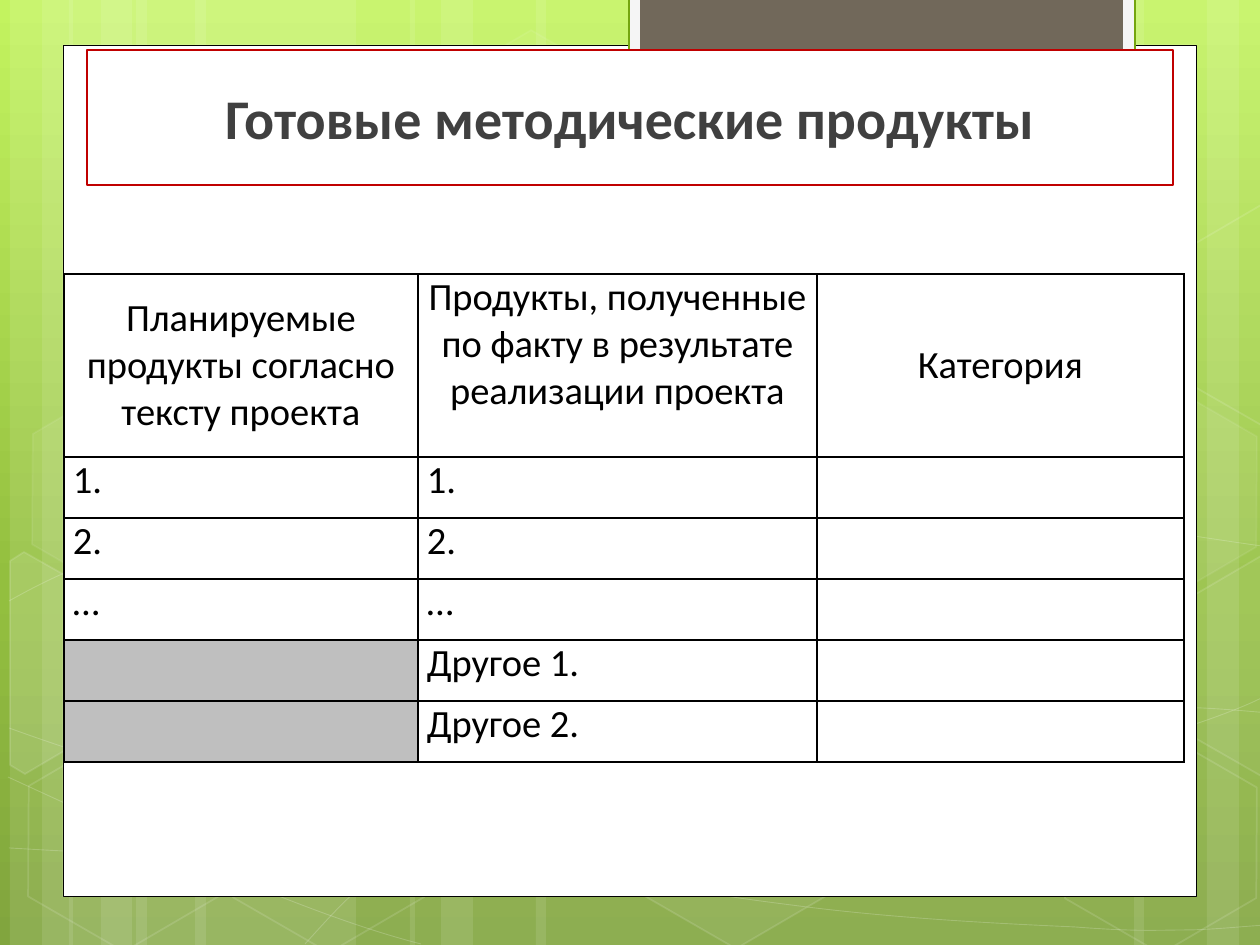
from copy import deepcopy
from dataclasses import dataclass

from lxml import etree
from pptx import Presentation
from pptx import util as u
from pptx.dml.color import RGBColor
from pptx.enum import shapes, text
from pptx.oxml.ns import qn

SCALE = 914400 / 126


@dataclass(frozen=True)
class Theme:
    font: str = "Calibri"
    head: int = 32
    body: int = 22
    sky: tuple = ((0, "C3F35F"), (0.62, "93BF3F"), (1, "81A53E"))
    white: str = "FFFFFF"
    black: str = "000000"
    ink: str = "404040"
    red: str = "C00000"
    green: str = "74A510"
    pale: str = "F5F5F5"
    brown: str = "71685A"
    gray: str = "BFBFBF"


T = Theme()

BANDS = [(136, 220), (10, 63), (42, 105), (195, 220), (69, 63), (101, 105),
         (924, 220), (1207, 63), (1134, 105), (536, 388), (410, 63), (441, 105)]

# Each curve: a start, then two control points and an end per segment.
CURVES = [
    [(9, 848), (77, 852), (145, 856), (239, 854), (334, 853), (451, 851), (577, 838),
     (703, 825), (882, 801), (998, 777), (1113, 753), (1231, 716), (1269, 694)],
    [(9, 601), (45, 581), (82, 562), (152, 543), (224, 524), (326, 496), (437, 488),
     (549, 479), (685, 478), (824, 488), (963, 498), (1193, 537), (1269, 547)],
    [(8, 777), (160, 847), (311, 916), (421, 944)],
    [(9, 728), (48, 742), (88, 756), (161, 776), (234, 795), (344, 827), (450, 848),
     (554, 869), (687, 892), (791, 905), (896, 919), (1008, 924), (1075, 927),
     (1140, 932), (1158, 930), (1191, 930), (1223, 929), (1246, 926), (1269, 925)],
    [(305, 944), (328, 919), (350, 893), (381, 871), (411, 848), (454, 823), (489, 805),
     (524, 788), (546, 780), (592, 767), (638, 755), (722, 737), (766, 728),
     (811, 719), (818, 719), (857, 717), (896, 713), (958, 709), (1000, 708),
     (1045, 707), (1116, 708), (1116, 708), (1138, 708), (1179, 708), (1201, 708),
     (1223, 709), (1245, 711), (1268, 713)],
]

# Left, top, fill opacity, line opacity
HEXES = [(421, 45, 4, 8), (626, 742, 6, 12), (14, 745, 0, 12), (18, 393, 7, 8),
         (219, 746, 0, 12), (949, 571, 10, 12), (1051, 747, 0, 12), (1051, 396, 7, 8)]

LEFT = [(10, 561), (24, 552), (121, 607), (120, 718), (25, 774), (10, 765)]
RIGHT = [(1167, 611), (1261, 556), (1271, 562), (1271, 772), (1263, 777), (1167, 722)]
UPPER = [(x, y - 351) for x, y in RIGHT]

ROWS = [
    ("Планируемые продукты согласно тексту проекта",
     "Продукты, полученные по факту в результате реализации проекта", "Категория"),
    ("1.", "1.", ""),
    ("2.", "2.", ""),
    ("…", "…", ""),
    ("", "Другое 1.", ""),
    ("", "Другое 2.", ""),
]


def px(n):
    return u.Emu(round(n * SCALE))


def paint(fill, color, alpha=100):
    """Solid fill with opacity in percent; zero means no fill."""
    if not alpha:
        fill.background()
        return
    fill.solid()
    fill.fore_color.rgb = RGBColor.from_string(color)
    if alpha < 100:
        tone = fill._xPr.find(qn("a:solidFill"))[0]
        etree.SubElement(tone, qn("a:alpha"), val=str(alpha * 1000))


def style(shape, fill=T.white, alpha=100, line=T.white, width=1, sheer=100):
    shape.shadow.inherit = False
    paint(shape.fill, fill, alpha)
    paint(shape.line.fill, line, sheer)
    if sheer:
        shape.line.width = u.Pt(width)


def add_box(slide, box, kind=shapes.MSO_SHAPE.RECTANGLE, **look):
    shape = slide.shapes.add_shape(kind, *map(px, box))
    style(shape, **look)
    return shape


def add_hex(slide, x, y, alpha, sheer):
    shape = add_box(slide, (x, y, 220, 192), shapes.MSO_SHAPE.HEXAGON,
                    alpha=alpha, sheer=sheer)
    shape.adjustments[0] = 0.285
    shape.rotation = 30


def add_path(slide, points, close=True, **look):
    pen = slide.shapes.build_freeform(*points[0], scale=SCALE)
    pen.add_line_segments(points[1:], close=close)
    shape = pen.convert_to_shape()
    style(shape, **look)
    return shape


def add_curve(slide, points):
    """Draw through all points, then join each three lines into one Bezier."""
    shape = add_path(slide, points, close=False, alpha=0, width=0.5, sheer=20)
    lines = list(shape._element.iter(qn("a:lnTo")))
    for i in range(0, len(lines), 3):
        first, *rest = lines[i:i + 3]
        first.addprevious(bend := first.makeelement(qn("a:cubicBezTo")))
        for line in (first, *rest):
            bend.append(line[0])
            line.getparent().remove(line)


def add_sky(slide):
    fill = slide.background.fill
    fill.gradient()
    fill.gradient_angle = 270
    first = fill.gradient_stops[0]._gs
    first.addnext(deepcopy(first))
    for stop, (place, color) in zip(fill.gradient_stops, T.sky):
        stop.position = place
        stop.color.rgb = RGBColor.from_string(color)


def set_font(para, size, color, bold=False):
    font = para.font
    font.name, font.size, font.bold = T.font, u.Pt(size), bold
    font.color.rgb = RGBColor.from_string(color)


def add_title(slide, words, box):
    title = slide.shapes.title
    slide.shapes._spTree.append(title._element)
    title.left, title.top, title.width, title.height = map(px, box)
    paint(title.fill, T.white)
    paint(title.line.fill, T.red)
    title.line.width = u.Pt(0.75)
    frame = title.text_frame
    frame.text = words
    frame.vertical_anchor = text.MSO_ANCHOR.MIDDLE
    para = frame.paragraphs[0]
    para.alignment = text.PP_ALIGN.CENTER
    set_font(para, T.head, T.ink, True)


def add_edges(cell):
    props = cell._tc.get_or_add_tcPr()
    for side in "LRTB":
        edge = etree.SubElement(props, qn(f"a:ln{side}"), w=str(u.Pt(1)))
        fill = etree.SubElement(edge, qn("a:solidFill"))
        etree.SubElement(fill, qn("a:srgbClr"), val=T.black)


def add_grid(slide, x, y, cols, highs):
    grid = slide.shapes.add_table(len(highs), len(cols), px(x), px(y),
                                  px(sum(cols)), px(sum(highs))).table
    grid.first_row = grid.horz_banding = False
    for col, wide in zip(grid.columns, cols):
        col.width = px(wide)
    for r, (row, high, words) in enumerate(zip(grid.rows, highs, ROWS)):
        row.height = px(high)
        for c, (cell, word) in enumerate(zip(row.cells, words)):
            cell.text = word
            cell.margin_left = cell.margin_right = px(9)
            cell.margin_top = cell.margin_bottom = 0
            para = cell.text_frame.paragraphs[0]
            set_font(para, T.body, T.black)
            if r == 0:
                para.alignment = text.PP_ALIGN.CENTER
                if c != 1:
                    cell.vertical_anchor = text.MSO_ANCHOR.MIDDLE
            add_edges(cell)
            paint(cell.fill, T.gray, 100 if c == 0 and not word else 0)


def main():
    deck = Presentation()
    deck.slide_width, deck.slide_height = px(1260), px(945)
    slide = deck.slides.add_slide(deck.slide_layouts[5])
    add_sky(slide)
    for x, wide in BANDS:
        add_box(slide, (x, 0, wide, 945), alpha=10, sheer=0)
    for points in CURVES:
        add_curve(slide, points)
    for spot in HEXES:
        add_hex(slide, *spot)
    for points, alpha in ((LEFT, 10), (RIGHT, 4), (UPPER, 0)):
        add_path(slide, points, alpha=alpha, sheer=12)
    add_box(slide, (63, 45, 1134, 852), line=T.black, width=0.5)
    add_box(slide, (629, -2, 506, 96), fill=T.pale, line=T.green, width=1.25)
    add_box(slide, (640, -2, 483, 86), fill=T.brown, sheer=0)
    add_title(slide, "Готовые методические продукты", (87, 50, 1086, 135))
    add_grid(slide, 64, 274, (354, 399, 367), [183] + [61] * 5)
    deck.save("out.pptx")


if __name__ == "__main__":
    main()
